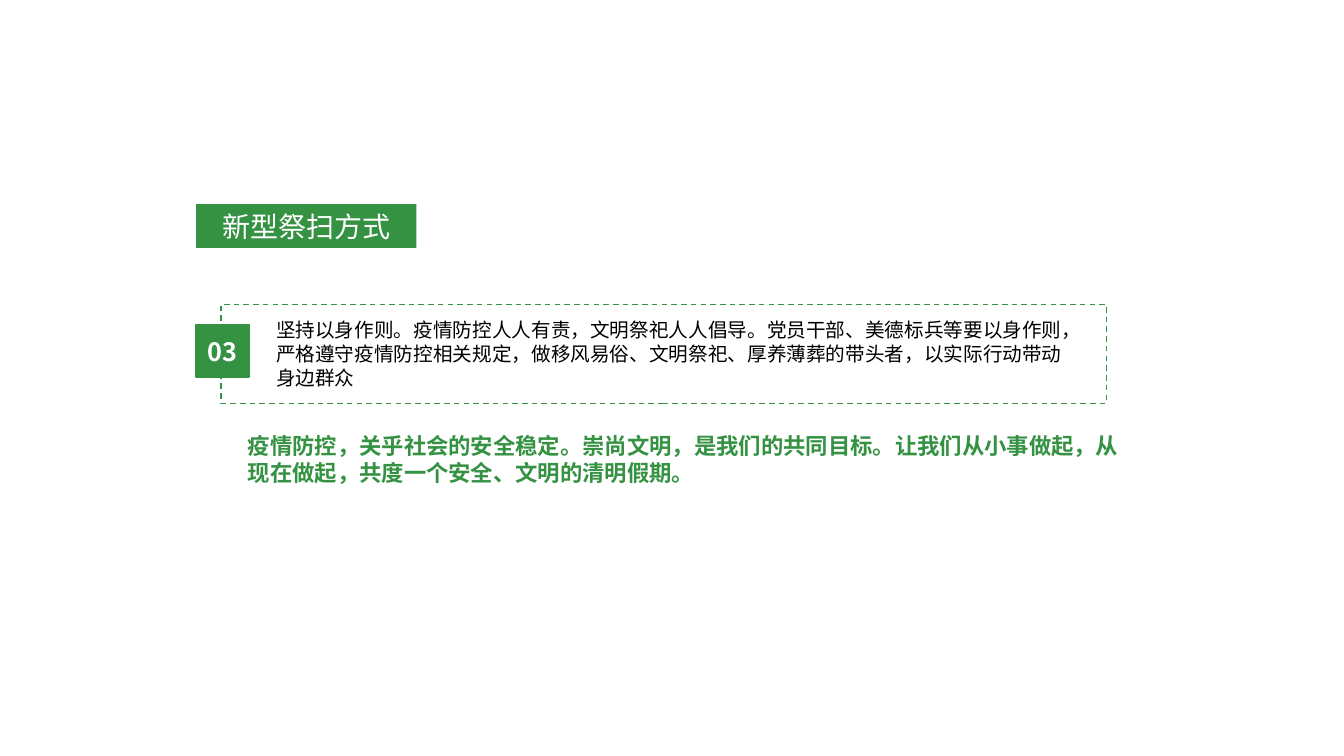
import pptx
import pptx.util
import pptx.dml.color
import pptx.enum.dml
import pptx.enum.shapes
import pptx.enum.text
import pptx.oxml

Pt = pptx.util.Pt
ALIGN = pptx.enum.text.PP_ALIGN
ANCHOR = pptx.enum.text.MSO_ANCHOR

COLORS = {"green": "359243", "white": "FFFFFF", "black": "000000"}
FONT = "Noto Sans CJK SC"
LINE_HEIGHT = 1.22  # line pitch relative to the text size


class SlideBuilder:
    """Holds the style and the slide; places are given on a 100 x 100 grid."""

    def __init__(self, prs):
        self.col = prs.slide_width / 100
        self.row = prs.slide_height / 100
        self.slide = prs.slides.add_slide(prs.slide_layouts[5])

    def place(self, x, y, w, h):
        return (round(x * self.col), round(y * self.row),
                round(w * self.col), round(h * self.row))

    def color(self, name):
        return pptx.dml.color.RGBColor.from_string(COLORS[name])

    def set_text(self, sp, text, size, color, bold=False, align=ALIGN.LEFT,
                 anchor=ANCHOR.TOP):
        tf = sp.text_frame
        tf.word_wrap = True
        tf.auto_size = pptx.enum.text.MSO_AUTO_SIZE.NONE
        tf.vertical_anchor = anchor
        p = tf.paragraphs[0]
        r = p.add_run()
        r.text = text
        p.alignment = align
        p.line_spacing = Pt(round(size * LINE_HEIGHT, 1))
        p.font.size, p.font.bold, p.font.name = Pt(size), bold, FONT
        p.font.color.rgb = self.color(color)
        # East Asian glyphs take their typeface from the run
        r.font.name = FONT
        ea = pptx.oxml.parse_xml(
            '<a:ea xmlns:a="http://schemas.openxmlformats.org/drawingml/2006/main"'
            f' typeface="{FONT}"/>')
        r.font._element.append(ea)

    def title(self, grid, text, size):
        sp = self.slide.shapes.title
        sp.left, sp.top, sp.width, sp.height = self.place(*grid)
        sp.fill.solid()
        sp.fill.fore_color.rgb = self.color("green")
        self.set_text(sp, text, size, "white", align=ALIGN.CENTER)

    def rect(self, grid, fill=None, dash=None):
        sp = self.slide.shapes.add_shape(
            pptx.enum.shapes.MSO_SHAPE.RECTANGLE, *self.place(*grid))
        sp.shadow.inherit = False
        if fill:
            sp.fill.solid()
            sp.fill.fore_color.rgb = self.color(fill)
        else:
            sp.fill.background()
        sp.line.color.rgb = self.color("green")
        sp.line.width = Pt(1)
        sp.line.dash_style = dash
        return sp

    def text(self, grid, text, size, color, bold=False):
        sp = self.slide.shapes.add_textbox(*self.place(*grid))
        self.set_text(sp, text, size, color, bold)


def main():
    prs = pptx.Presentation()
    prs.slide_width = pptx.util.Inches(13.33)
    prs.slide_height = pptx.util.Inches(7.5)
    s = SlideBuilder(prs)

    # Heading tag
    s.title((14.59, 27, 16.4, 5.8), "新型祭扫方式", 20)

    # Numbered point in a dashed frame
    s.rect((16.45, 40.27, 65.87, 13.1), dash=pptx.enum.dml.MSO_LINE.DASH)
    badge = s.rect((14.59, 42.9, 3.94, 7), fill="green")
    s.set_text(badge, "03", 18, "white", True, ALIGN.CENTER, ANCHOR.MIDDLE)
    s.text((19.8, 41.4, 60.35, 10.8),
           "坚持以身作则。疫情防控人人有责，文明祭祀人人倡导。"
           "党员干部、美德标兵等要以身作则，严格遵守疫情防控相关规定，"
           "做移风易俗、文明祭祀、厚养薄葬的带头者，以实际行动带动身边群众",
           14, "black")

    # Closing appeal
    s.text((17.7, 56.4, 66.6, 8.5),
           "疫情防控，关乎社会的安全稳定。崇尚文明，是我们的共同目标。"
           "让我们从小事做起，从现在做起，共度一个安全、文明的清明假期。",
           16, "green", True)

    prs.save("out.pptx")


if __name__ == "__main__":
    main()
